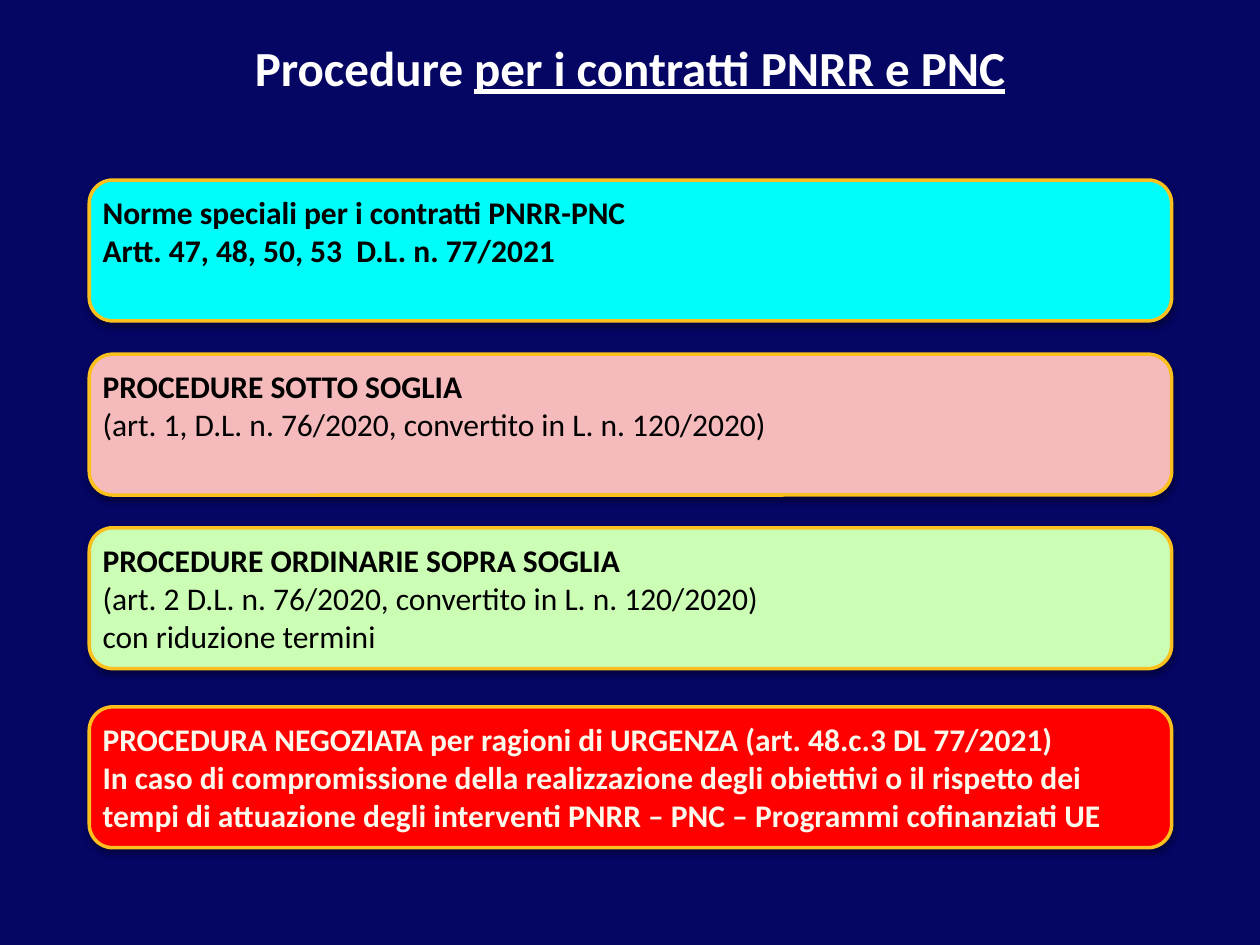
from dataclasses import dataclass

from lxml.etree import SubElement
from pptx import Presentation
from pptx.dml.color import RGBColor
from pptx.enum.shapes import MSO_SHAPE
from pptx.enum.text import MSO_ANCHOR, PP_ALIGN
from pptx.oxml.ns import qn
from pptx.util import Cm, Pt


@dataclass(frozen=True)
class Theme:
    face: str = "Calibri"
    head: int = 28
    body: int = 18
    back: str = "050563"
    white: str = "FFFFFF"
    black: str = "000000"
    cream: str = "FCF9EC"
    gold: str = "FBC01E"
    cyan: str = "00FDF9"
    pink: str = "F5BABB"
    green: str = "CBFDB5"
    red: str = "FF0000"


theme = Theme()


def style(para, size, color, bold):
    font = para.font
    font.name, font.size, font.bold = theme.face, Pt(size), bold
    font.color.rgb = RGBColor.from_string(color)


def shade(shape):
    """Give the shape a soft shadow that falls straight down."""
    shape.shadow.inherit = False
    effects = shape._element.spPr.find(qn("a:effectLst"))
    outer = SubElement(effects, qn("a:outerShdw"), blurRad=str(Pt(3)),
                       dist=str(Pt(1.8)), dir="5400000", rotWithShape="0")
    color = SubElement(outer, qn("a:srgbClr"), val=theme.black)
    SubElement(color, qn("a:alpha"), val="35000")


deck = Presentation()
deck.slide_width, deck.slide_height = Cm(25.4), Cm(19.05)
slide = deck.slides.add_slide(deck.slide_layouts[6])
slide.background.fill.solid()
slide.background.fill.fore_color.rgb = RGBColor.from_string(theme.back)

# Title
title = slide.shapes.add_textbox(Cm(1.27), Cm(0.76), Cm(22.86), Cm(2.44))
frame = title.text_frame
frame.word_wrap = True
frame.margin_top = 0
para = frame.paragraphs[0]
para.alignment = PP_ALIGN.CENTER
style(para, theme.head, theme.white, True)
para.add_run().text = "Procedure "
run = para.add_run()
run.text = "per i contratti PNRR e PNC"
run.font.underline = True

# Cards: top in cm, fill, text colour, number of bold lines, lines
cards = [
    (3.63, theme.cyan, theme.black, 2, [
        "Norme speciali per i contratti PNRR-PNC",
        "Artt. 47, 48, 50, 53  D.L. n. 77/2021"]),
    (7.14, theme.pink, theme.black, 1, [
        "PROCEDURE SOTTO SOGLIA",
        "(art. 1, D.L. n. 76/2020, convertito in L. n. 120/2020)"]),
    (10.64, theme.green, theme.black, 1, [
        "PROCEDURE ORDINARIE SOPRA SOGLIA",
        "(art. 2 D.L. n. 76/2020, convertito in L. n. 120/2020)",
        "con riduzione termini"]),
    (14.25, theme.red, theme.cream, 3, [
        "PROCEDURA NEGOZIATA per ragioni di URGENZA (art. 48.c.3 DL 77/2021)",
        "In caso di compromissione della realizzazione degli obiettivi o il rispetto dei",
        "tempi di attuazione degli interventi PNRR – PNC – Programmi cofinanziati UE"]),
]

for top, fill, ink, bolds, lines in cards:
    card = slide.shapes.add_shape(MSO_SHAPE.ROUNDED_RECTANGLE,
                                  Cm(1.8), Cm(top), Cm(21.82), Cm(2.84))
    card.fill.solid()
    card.fill.fore_color.rgb = RGBColor.from_string(fill)
    card.line.color.rgb = RGBColor.from_string(theme.gold)
    card.line.width = Pt(2)
    shade(card)
    frame = card.text_frame
    frame.word_wrap = True
    frame.vertical_anchor = MSO_ANCHOR.TOP
    frame.margin_left = frame.margin_right = Cm(0.13)
    frame.margin_top = frame.margin_bottom = Cm(0.13)
    frame.text = "\n".join(lines)
    for row, para in enumerate(frame.paragraphs):
        para.alignment = PP_ALIGN.LEFT
        style(para, theme.body, ink, row < bolds)

deck.save("out.pptx")
